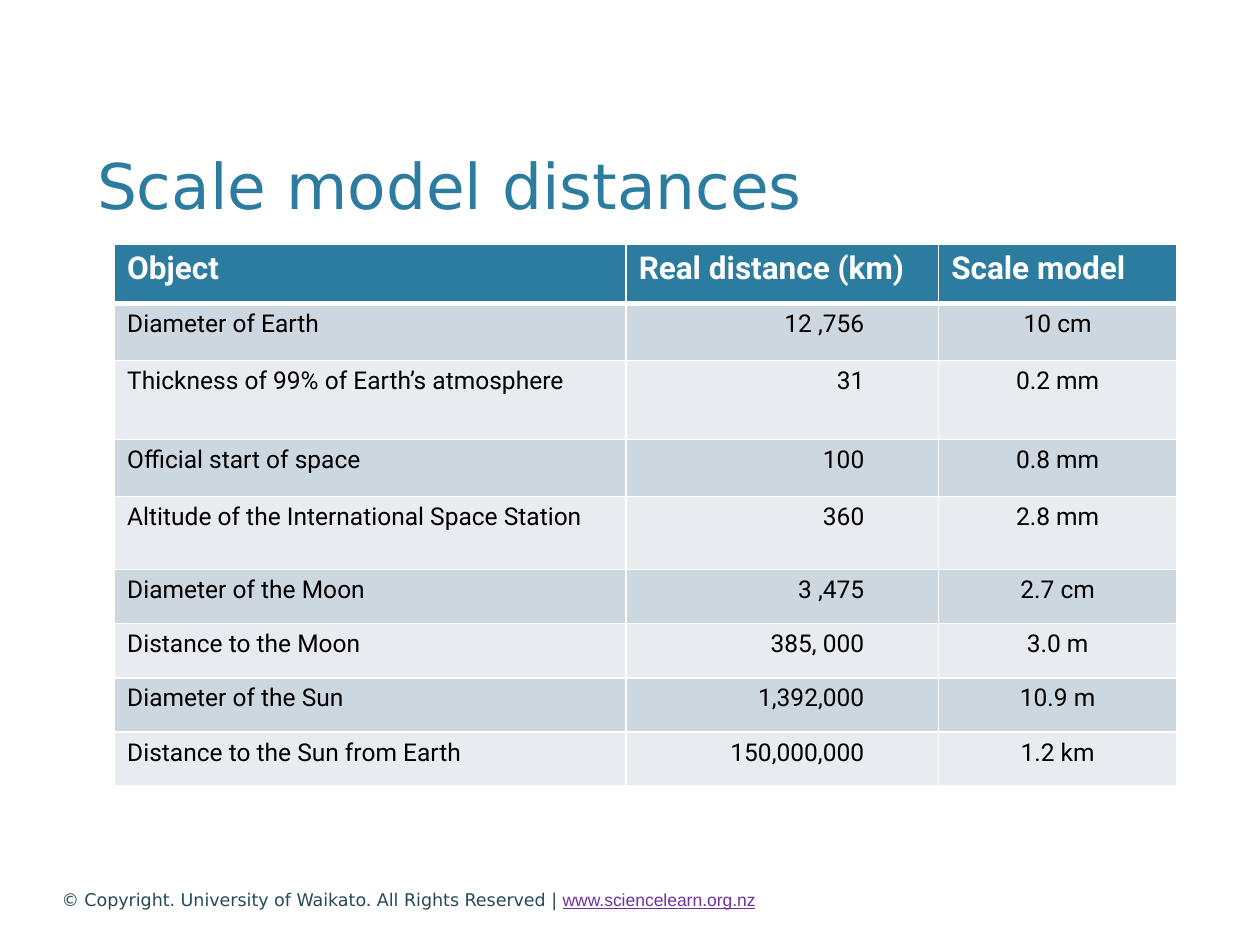
from lxml.etree import SubElement
from pptx import Presentation
from pptx.dml.color import RGBColor
from pptx.enum.text import MSO_ANCHOR, PP_ALIGN
from pptx.oxml.ns import qn
from pptx.util import Inches, Pt

# Content
TITLE = "Scale model distances"
ROWS = [
    ("Object", "Real distance (km)", "Scale model"),
    ("Diameter of Earth", "12 ,756", "10 cm"),
    ("Thickness of 99% of Earth’s atmosphere", "31", "0.2 mm"),
    ("Official start of space", "100", "0.8 mm"),
    ("Altitude of the International Space Station", "360", "2.8 mm"),
    ("Diameter of the Moon", "3 ,475", "2.7 cm"),
    ("Distance to the Moon", "385, 000", "3.0 m"),
    ("Diameter of the Sun", "1,392,000", "10.9 m"),
    ("Distance to the Sun from Earth", "150,000,000", "1.2 km"),
]
FOOTER = [
    ("© Copyright. University of Waikato. All Rights Reserved | ", "DejaVu Sans", "244A58"),
    ("www.sciencelearn.org.nz", "Arial", "7030A0"),
]

# Layout and colours
COLUMN_WIDTHS = [4.06, 2.48, 1.89]
ROW_HEIGHTS = [0.47, 0.45, 0.63, 0.45, 0.58] + [0.43] * 4
ALIGNMENTS = [PP_ALIGN.LEFT, PP_ALIGN.RIGHT, PP_ALIGN.CENTER]
TEAL, WHITE, BLACK = "2C7C9F", "FFFFFF", "000000"
BANDS = ["E8ECF0", "CDD7DF"]


def style(font, name, size, color, bold=False):
    font.name = name
    font.size = Pt(size)
    font.bold = bold
    font.color.rgb = RGBColor.from_string(color)


def set_insets(frame, horizontal, vertical):
    frame.margin_left = frame.margin_right = Inches(horizontal)
    frame.margin_top = frame.margin_bottom = Inches(vertical)


def add_borders(cell, top, bottom):
    properties = cell._tc.get_or_add_tcPr()
    sides = [("lnL", 1), ("lnR", 1), ("lnT", top), ("lnB", bottom)]
    for index, (side, width) in enumerate(sides):
        line = properties.makeelement(qn(f"a:{side}"), {"w": str(Pt(width))})
        fill = SubElement(line, qn("a:solidFill"))
        SubElement(fill, qn("a:srgbClr"), val=WHITE)
        properties.insert(index, line)


deck = Presentation()
deck.slide_width, deck.slide_height = Inches(10), Inches(7.5)
slide = deck.slides.add_slide(deck.slide_layouts[5])

# Title
title = slide.shapes.title
title.left, title.top = Inches(0.67), Inches(1.06)
title.width, title.height = Inches(8.66), Inches(0.7)
frame = title.text_frame
frame.text = TITLE
frame.vertical_anchor = MSO_ANCHOR.TOP
set_insets(frame, 0.1, 0.05)
frame.margin_top = Inches(0.1)
frame.paragraphs[0].alignment = PP_ALIGN.LEFT
style(frame.paragraphs[0].runs[0].font, "DejaVu Sans", 36, TEAL)

# Distance table
table = slide.shapes.add_table(
    len(ROWS), len(COLUMN_WIDTHS), Inches(0.91), Inches(1.94),
    Inches(sum(COLUMN_WIDTHS)), Inches(sum(ROW_HEIGHTS))).table
for column, width in zip(table.columns, COLUMN_WIDTHS):
    column.width = Inches(width)
for row, height in zip(table.rows, ROW_HEIGHTS):
    row.height = Inches(height)

for row_index, values in enumerate(ROWS):
    header = row_index == 0
    for column_index, value in enumerate(values):
        cell = table.cell(row_index, column_index)
        cell.text = value
        set_insets(cell, 0.1, 0.05)
        cell.fill.solid()
        cell.fill.fore_color.rgb = RGBColor.from_string(
            TEAL if header else BANDS[row_index % 2])
        add_borders(cell, 3 if row_index == 1 else 1, 3 if header else 1)
        para = cell.text_frame.paragraphs[0]
        para.alignment = PP_ALIGN.LEFT if header else ALIGNMENTS[column_index]
        if column_index == 1 and not header:
            cell.margin_right = Inches(0.59)
        style(para.runs[0].font, "Roboto", 18 if header else 14,
              WHITE if header else BLACK, header)

# Copyright line
box = slide.shapes.add_textbox(Inches(0.39), Inches(6.94), Inches(7.74), Inches(0.4))
frame = box.text_frame
frame.word_wrap = True
frame.vertical_anchor = MSO_ANCHOR.MIDDLE
set_insets(frame, 0.1, 0.1)
for text, font_name, color in FOOTER:
    span = frame.paragraphs[0].add_run()
    span.text = text
    style(span.font, font_name, 10, color)
span.font.underline = True

deck.save("out.pptx")
